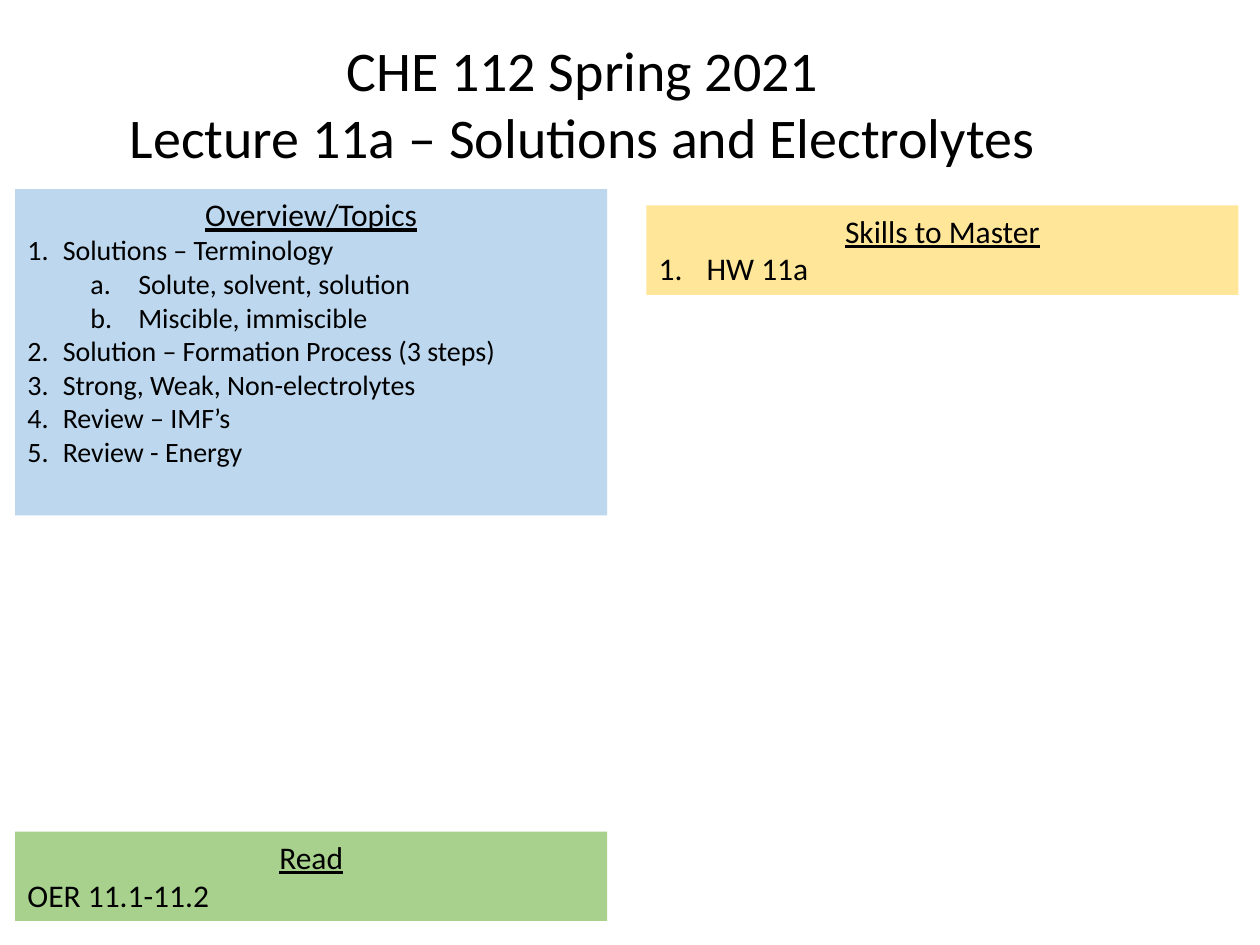
from dataclasses import dataclass

from lxml.etree import SubElement
from pptx import Presentation
from pptx.dml.color import RGBColor
from pptx.enum.shapes import MSO_SHAPE
from pptx.enum.text import MSO_ANCHOR, MSO_AUTO_SIZE, PP_ALIGN
from pptx.oxml.ns import qn
from pptx.slide import Slide
from pptx.text.text import TextFrame
from pptx.util import Inches, Pt

BLACK = RGBColor(0x00, 0x00, 0x00)
BLUE = RGBColor(0xBD, 0xD7, 0xEE)
GOLD = RGBColor(0xFF, 0xE6, 0x99)
GREEN = RGBColor(0xA9, 0xD1, 0x8E)
FONT = "Calibri"
WIDTH = 4.7
LEFT, RIGHT = 0.12, 5.13


@dataclass
class Item:
    text: str
    size: int = 18
    level: int = 0
    scheme: str = ""
    margin: float = 0
    hang: float = 0


@dataclass
class Panel:
    left: float
    top: float
    height: float
    fill: RGBColor
    head: str
    items: list[Item]


def topic(text: str) -> Item:
    return Item(text, 16, 0, "arabicPeriod", 0.28, 0.28)


def detail(text: str) -> Item:
    return Item(text, 16, 1, "alphaLcPeriod", 0.88, 0.38)


TITLE = ["CHE 112 Spring 2021", "Lecture 11a – Solutions and Electrolytes"]
PANELS = [
    Panel(LEFT, 1.5, 2.59, BLUE, "Overview/Topics", [
        topic("Solutions – Terminology"),
        detail("Solute, solvent, solution"),
        detail("Miscible, immiscible"),
        topic("Solution – Formation Process (3 steps)"),
        topic("Strong, Weak, Non-electrolytes"),
        topic("Review – IMF’s"),
        topic("Review - Energy"),
    ]),
    Panel(RIGHT, 1.63, 0.71, GOLD, "Skills to Master", [
        Item("HW 11a", scheme="arabicPeriod", margin=0.38, hang=0.38),
    ]),
    Panel(LEFT, 6.6, 0.71, GREEN, "Read", [Item("OER 11.1-11.2")]),
]


def add_line(frame: TextFrame, text: str, *, first: bool = False,
             size: int = 18, align: PP_ALIGN = PP_ALIGN.LEFT,
             under: bool = False, level: int = 0, scheme: str = "",
             margin: float = 0, hang: float = 0) -> None:
    """Write one paragraph, numbered when a scheme is given."""
    para = frame.paragraphs[0] if first else frame.add_paragraph()
    para.alignment = align
    para.level = level
    run = para.add_run()
    run.text = text
    font = run.font
    font.name, font.size, font.underline = FONT, Pt(size), under
    font.color.rgb = BLACK
    if scheme:
        props = para._p.get_or_add_pPr()
        props.set("marL", str(Inches(margin)))
        props.set("indent", str(-Inches(hang)))
        SubElement(props, qn("a:buAutoNum"), type=scheme)


def add_panel(slide: Slide, panel: Panel) -> None:
    box = slide.shapes.add_shape(
        MSO_SHAPE.RECTANGLE, Inches(panel.left), Inches(panel.top),
        Inches(WIDTH), Inches(panel.height))
    box.shadow.inherit = False
    box.fill.solid()
    box.fill.fore_color.rgb = panel.fill
    box.line.fill.background()
    frame = box.text_frame
    frame.word_wrap = True
    frame.vertical_anchor = MSO_ANCHOR.TOP
    add_line(frame, panel.head, first=True, align=PP_ALIGN.CENTER, under=True)
    for item in panel.items:
        add_line(frame, item.text, size=item.size, level=item.level,
                 scheme=item.scheme, margin=item.margin, hang=item.hang)


def set_title(slide: Slide) -> None:
    title = slide.shapes.title
    title.left, title.top = Inches(0.89), Inches(0.23)
    title.width, title.height = Inches(7.47), Inches(1.18)
    frame = title.text_frame
    frame.word_wrap = False
    frame.auto_size = MSO_AUTO_SIZE.NONE
    frame.vertical_anchor = MSO_ANCHOR.TOP
    for index, text in enumerate(TITLE):
        add_line(frame, text, first=index == 0, size=32,
                 align=PP_ALIGN.CENTER)


def main() -> None:
    deck = Presentation()
    deck.slide_width, deck.slide_height = Inches(10), Inches(7.5)
    slide = deck.slides.add_slide(deck.slide_layouts[5])
    set_title(slide)
    for panel in PANELS:
        add_panel(slide, panel)
    deck.save("out.pptx")


if __name__ == "__main__":
    main()
